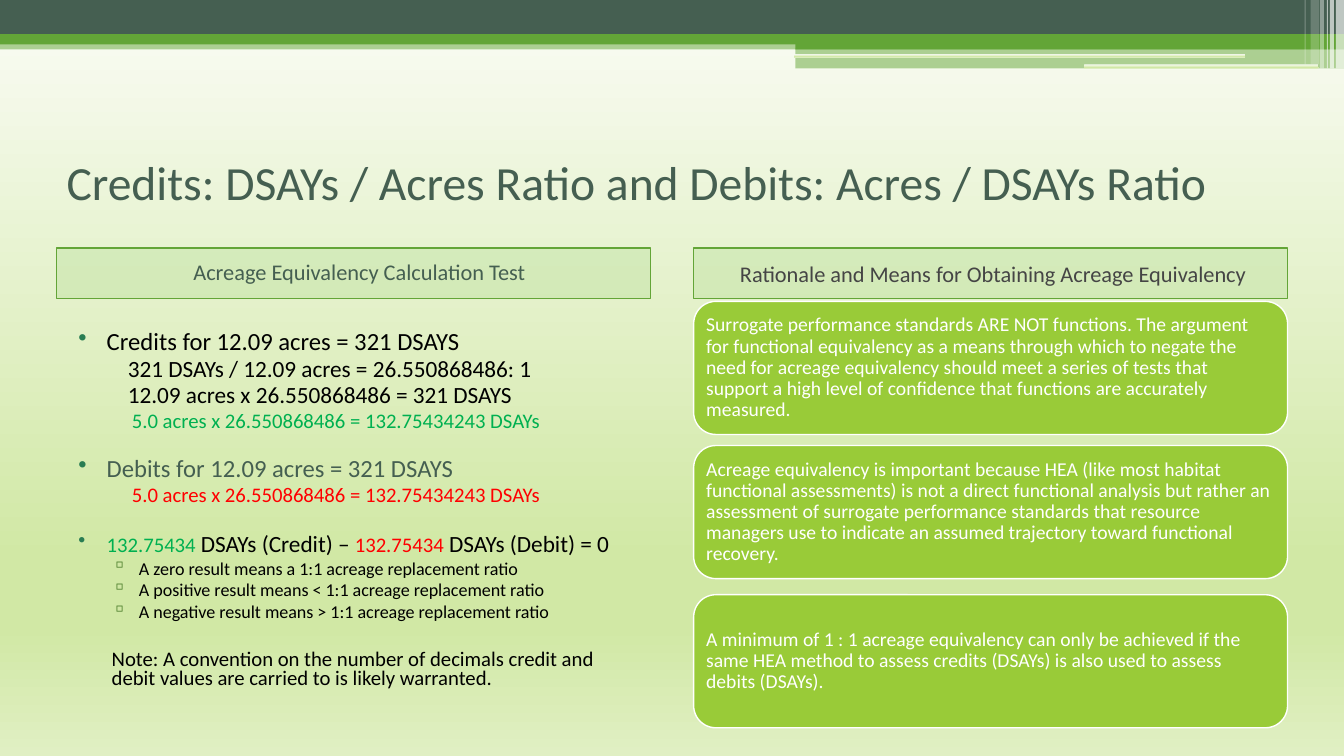
from lxml.etree import SubElement
from pptx import Presentation
from pptx.dml.color import RGBColor
from pptx.enum.shapes import MSO_SHAPE as Preset
from pptx.enum.text import MSO_ANCHOR as Anchor, PP_ALIGN as Align
from pptx.oxml.ns import qn
from pptx.util import Inches, Pt

COLORS = {
    "slate": "455F51", "green": "63A537", "lime": "99CB38", "pale": "9FD47D",
    "white": "FFFFFF", "black": "000000", "gray": "454545",
    "credit": "00B050", "debit": "FF0000", "dot": "297D53", "square": "4A7C29",
}
BACKDROP = [(0, "FAFCF5"), (74, "D1E8A5"), (83, "D1E8A5"), (100, "E0EFC3")]
FONT = "Calibri"


class SlideBuilder:
    """Holds the style and the current slide."""

    def __init__(self, slide):
        self.slide = slide

    def gradient(self, fill, element):
        """Give the fill of element the vertical backdrop gradient."""
        fill.gradient()
        fill.gradient_angle = 270
        stops = next(element.iter(qn("a:gsLst")))
        for stop in list(stops):
            stops.remove(stop)
        for percent, color in BACKDROP:
            stop = SubElement(stops, qn("a:gs"), pos=str(percent * 1000))
            SubElement(stop, qn("a:srgbClr"), val=color)

    def background(self):
        self.gradient(self.slide.background.fill, self.slide.element)

    def shape(self, box, color=None, alpha=100, line=None, preset=Preset.RECTANGLE):
        """Draw a preset shape; without a color it takes the backdrop gradient."""
        shape = self.slide.shapes.add_shape(preset, *map(Inches, box))
        shape.shadow.inherit = False
        if color:
            shape.fill.solid()
            shape.fill.fore_color.rgb = RGBColor.from_string(COLORS[color])
        else:
            self.gradient(shape.fill, shape.element)
        if alpha < 100:
            value = next(shape.element.spPr.iter(qn("a:srgbClr")))
            SubElement(value, qn("a:alpha"), val=str(alpha * 1000))
        if line:
            shape.line.color.rgb = RGBColor.from_string(COLORS[line])
            shape.line.width = Pt(1)
        else:
            shape.line.fill.background()
        return shape

    def style(self, font, size, color):
        font.name = FONT
        font.size = Pt(size)
        font.color.rgb = RGBColor.from_string(COLORS[color])

    def fill_text(self, shape, text, size, color, align=Align.LEFT, spacing=0.9):
        frame = shape.text_frame
        frame.word_wrap = True
        frame.vertical_anchor = Anchor.MIDDLE
        paragraph = frame.paragraphs[0]
        paragraph.text = text
        paragraph.alignment = align
        paragraph.line_spacing = spacing
        self.style(paragraph.font, size, color)
        return paragraph

    def title(self, text, box):
        title = self.slide.shapes.title
        title.left, title.top, title.width, title.height = map(Inches, box)
        self.fill_text(title, text, 34, "slate")

    def header(self, text, box, color, indent, spacing):
        shape = self.shape(box, "pale", 25, "green")
        paragraph = self.fill_text(shape, text, 16, color, Align.CENTER, spacing)
        paragraph.space_before = Pt(3)
        self.indent(paragraph, indent, 0)

    def card(self, text, box):
        shape = self.shape(box, "lime", line="white", preset=Preset.ROUNDED_RECTANGLE)
        frame = shape.text_frame
        frame.margin_left = frame.margin_right = Inches(0.06)
        frame.margin_top = frame.margin_bottom = Inches(0.06)
        self.fill_text(shape, text, 14, "white")

    def indent(self, paragraph, left, hanging, bullet=None, bullet_color=None):
        properties = paragraph._p.get_or_add_pPr()
        properties.set("marL", str(Inches(left)))
        properties.set("indent", str(Inches(hanging)))
        if bullet:
            color = SubElement(properties, qn("a:buClr"))
            SubElement(color, qn("a:srgbClr"), val=COLORS[bullet_color])
            SubElement(properties, qn("a:buChar"), char=bullet)

    def calculation(self, box, rows):
        """Write rows of (space before, indent settings, runs)."""
        frame = self.slide.shapes.add_textbox(*map(Inches, box)).text_frame
        frame.word_wrap = True
        frame.margin_top = Inches(0.33)
        for index, (before, indent, runs) in enumerate(rows):
            paragraph = frame.add_paragraph() if index else frame.paragraphs[0]
            paragraph.line_spacing = 0.8
            paragraph.space_before = Pt(before)
            self.indent(paragraph, *indent)
            if len(runs) == 1:
                self.style(paragraph.font, *runs[0][1:])
            for text, size, color in runs:
                run = paragraph.add_run()
                run.text = text
                if len(runs) > 1:
                    self.style(run.font, size, color)


LEFT, RIGHT, WIDTH = 0.56, 6.88, 5.89
HEADER_TOP, HEADER_HEIGHT, CARD_HEIGHT = 2.46, 0.5, 1.32

BANDS = [
    ((0, 0.4, 13.33, 0.09), "green", 50),
    ((0, 0, 13.33, 0.34), "slate", 100),
    ((0, 0.34, 13.33, 0.1), "green", 100),
    ((7.89, 0.39, 5.44, 0.1), "green", 100),
    ((7.89, 0.48, 5.44, 0.2), "green", 50),
]
SLITS = [(7.88, 0.54, 4.47, 0.03), (10.75, 0.64, 2.33, 0.04)]
# left, width, height, opacity
STRIPES = [
    (13.25, 0.08, 0.68, 65), (13.19, 0.04, 0.68, 65), (13.16, 0.01, 0.68, 60),
    (13.09, 0.04, 0.68, 40), (13, 0.08, 0.64, 20), (12.94, 0.01, 0.64, 30),
]

DOT = (0.4, -0.28, "•", "dot")
SQUARE = (0.72, -0.27, "▫", "square")
FORMULA, EXAMPLE, NOTE = (0.61, 0), (0.65, 0), (0.45, 0)
FIVE_ACRES = "5.0 acres x 26.550868486 = 132.75434243 DSAYs"
ROWS = [
    (3, DOT, [("Credits for 12.09 acres = 321 DSAYS", 17.6, "black")]),
    (3, FORMULA, [("321 DSAYs / 12.09 acres = 26.550868486: 1", 16.6, "black")]),
    (3, FORMULA, [("12.09 acres x 26.550868486 = 321 DSAYS", 16.6, "black")]),
    (3, EXAMPLE, [(FIVE_ACRES, 14.8, "credit")]),
    (18.6, DOT, [("Debits for 12.09 acres = 321 DSAYS", 17.6, "slate")]),
    (3, EXAMPLE, [(FIVE_ACRES, 14.8, "debit")]),
    (20.4, DOT, [
        ("132.75434", 14.8, "credit"), (" DSAYs (Credit) – ", 16.6, "black"),
        ("132.75434", 14.8, "debit"), (" DSAYs (Debit) = 0", 16.6, "black"),
    ]),
    *[(3, SQUARE, [(f"A {result} result means {ratio} acreage replacement ratio", 12.9, "black")])
      for result, ratio in [("zero", "a 1:1"), ("positive", "< 1:1"), ("negative", "> 1:1")]],
    (20.4, NOTE, [("Note: A convention on the number of decimals credit and debit values "
                   "are carried to is likely warranted.", 14.8, "black")]),
]

CARDS = [
    (2.99, "Surrogate performance standards ARE NOT functions. The argument for functional "
           "equivalency as a means through which to negate the need for acreage equivalency "
           "should meet a series of tests that support a high level of confidence that "
           "functions are accurately measured."),
    (4.42, "Acreage equivalency is important because HEA (like most habitat functional "
           "assessments) is not a direct functional analysis but rather an assessment of "
           "surrogate performance standards that resource managers use to indicate an "
           "assumed trajectory toward functional recovery."),
    (5.9, "A minimum of 1 : 1 acreage equivalency can only be achieved if the same HEA "
          "method to assess credits (DSAYs) is also used to assess debits (DSAYs)."),
]


def main():
    presentation = Presentation()
    presentation.slide_width, presentation.slide_height = Inches(13.33), Inches(7.5)
    builder = SlideBuilder(presentation.slides.add_slide(presentation.slide_layouts[5]))
    builder.background()
    for box, color, alpha in BANDS:
        builder.shape(box, color, alpha)
    for box in SLITS:
        builder.shape(box, preset=Preset.ROUNDED_RECTANGLE)
    for left, width, height, alpha in STRIPES:
        builder.shape((left, 0, width, height), "white", alpha)

    builder.title("Credits: DSAYs / Acres Ratio and Debits: Acres / DSAYs Ratio",
                  (LEFT, 1.25, 12.22, 1.17))
    builder.header("Acreage Equivalency Calculation Test",
                   (LEFT, HEADER_TOP, WIDTH, HEADER_HEIGHT), "slate", 0.12, 0.9)
    builder.calculation((LEFT, HEADER_TOP + HEADER_HEIGHT, WIDTH, 4.25), ROWS)
    builder.header("Rationale and Means for Obtaining Acreage Equivalency",
                   (RIGHT, HEADER_TOP, WIDTH, HEADER_HEIGHT), "gray", 0.05, 1.0)
    for top, text in CARDS:
        builder.card(text, (RIGHT, top, WIDTH, CARD_HEIGHT))
    presentation.save("out.pptx")


if __name__ == "__main__":
    main()
